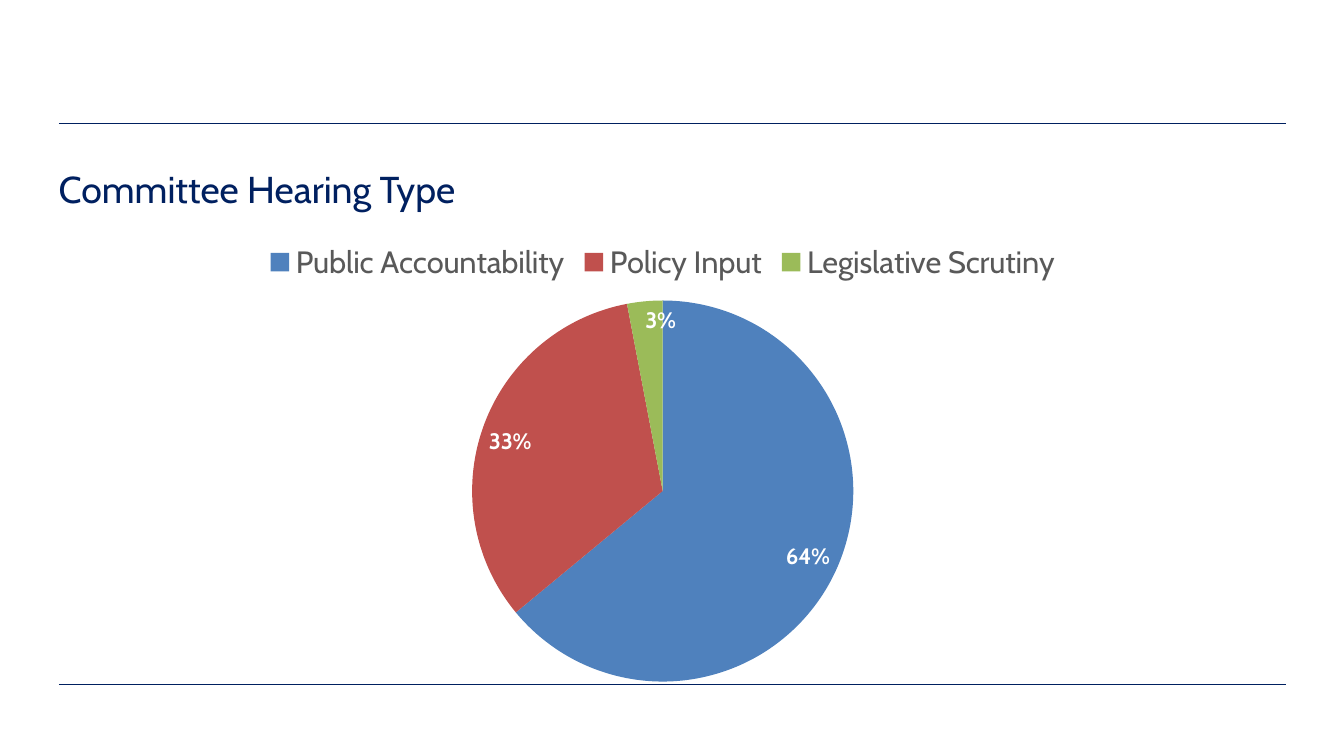
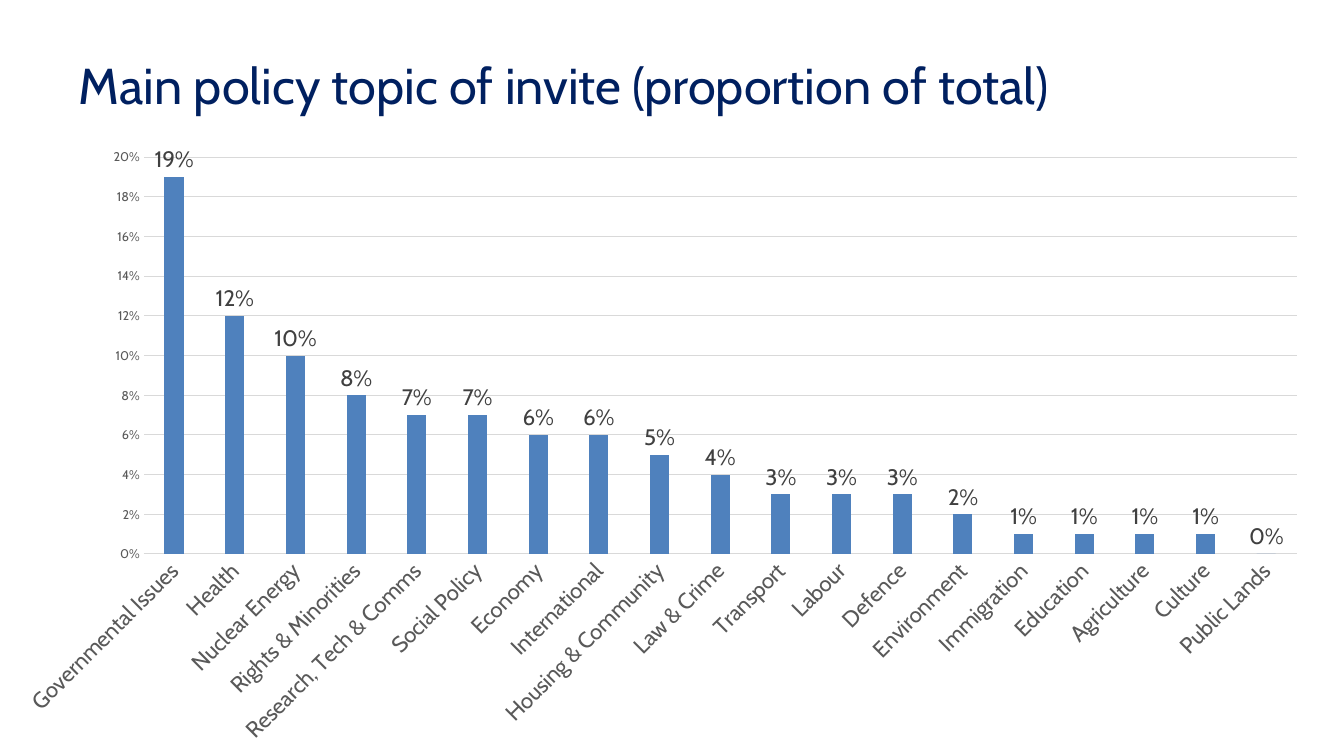
"""Build two chart slides on committee hearings and invite topics."""
from lxml import etree
from pptx import Presentation, util as u
from pptx.chart.data import CategoryChartData
from pptx.dml.color import RGBColor
from pptx.enum import chart as c, shapes, text
from pptx.oxml.ns import qn

FONT = "Cabin"
COLORS = {
    "navy": "002060",
    "blue": "4F81BD",
    "red": "C0504D",
    "green": "9BBB59",
    "label": "404040",
    "axis": "595959",
    "grid": "D9D9D9",
    "white": "FFFFFF",
    "black": "000000",
}

presentation = Presentation()
presentation.slide_width = u.Inches(13.33)
presentation.slide_height = u.Inches(7.5)
COLUMN = presentation.slide_width / 160
ROW = presentation.slide_height / 90


def place(left, top, width, height):
    """Turn grid columns and rows into slide lengths."""
    return [round(n * unit) for n, unit in zip((left, top, width, height), (COLUMN, ROW) * 2)]


def format_text(target, words=None, size=10, color="black", bold=False):
    """Set a font, or fill a text frame with words in that font."""
    font = target
    if words is not None:
        target.word_wrap = True
        target.vertical_anchor = text.MSO_ANCHOR.TOP
        target.margin_left = target.margin_right = 0
        target.margin_top = target.margin_bottom = 0
        run = target.paragraphs[0].add_run()
        run.text = words
        font = run.font
    font.name = FONT
    font.size = u.Pt(size)
    font.bold = bold
    font.color.rgb = RGBColor.from_string(COLORS[color])


HEARINGS = {
    "Public Accountability": (64, "blue"),
    "Policy Input": (33, "red"),
    "Legislative Scrutiny": (3, "green"),
}
TOPICS = {
    "Governmental Issues": 0.19,
    "Health": 0.12,
    "Nuclear Energy": 0.10,
    "Rights & Minorities": 0.08,
    "Research, Tech & Comms": 0.07,
    "Social Policy": 0.07,
    "Economy": 0.06,
    "International": 0.06,
    "Housing & Community": 0.05,
    "Law & Crime": 0.04,
    "Transport": 0.03,
    "Labour": 0.03,
    "Defence": 0.03,
    "Environment": 0.02,
    "Immigration": 0.01,
    "Education": 0.01,
    "Agriculture": 0.01,
    "Culture": 0.01,
    "Public Lands": 0,
}
SLIDES = [
    {
        "title": "Committee Hearing Type", "size": 26.7, "title_at": (7, 19.8),
        "rules": (14.75, 81.5), "kind": c.XL_CHART_TYPE.PIE,
        "chart_at": (7, 27.4, 143.8, 55.4),
        "values": {name: value for name, (value, color) in HEARINGS.items()},
        "label_color": "white", "label_position": c.XL_LABEL_POSITION.INSIDE_END,
    },
    {
        "title": "Main policy topic of invite (proportion of total)", "size": 36,
        "title_at": (9.4, 6.4), "rules": (), "kind": c.XL_CHART_TYPE.COLUMN_CLUSTERED,
        "chart_at": (0, 16.3, 157.5, 73.7), "values": TOPICS,
        "label_color": "label", "label_position": c.XL_LABEL_POSITION.OUTSIDE_END,
    },
]

for content in SLIDES:
    slide = presentation.slides.add_slide(presentation.slide_layouts[6])
    is_pie = content["kind"] == c.XL_CHART_TYPE.PIE

    for row in content["rules"]:
        rule = slide.shapes.add_connector(
            shapes.MSO_CONNECTOR.STRAIGHT, *place(7, row, 153.1, row))
        rule.line.color.rgb = RGBColor.from_string(COLORS["navy"])
        rule.line.width = u.Pt(0.75)
        etree.SubElement(rule._element.spPr, qn("a:effectLst"))

    title = slide.shapes.add_textbox(*place(*content["title_at"], 141.4, 7.6))
    format_text(title.text_frame, content["title"], size=content["size"], color="navy")

    data = CategoryChartData(number_format="General" if is_pie else "0%")
    data.categories = list(content["values"])
    data.add_series("Series 1", list(content["values"].values()))
    chart = slide.shapes.add_chart(content["kind"], *place(*content["chart_at"]), data).chart
    chart.has_title = False
    chart.has_legend = is_pie
    format_text(chart.font)

    plot = chart.plots[0]
    plot.vary_by_categories = is_pie
    plot.has_data_labels = True
    labels = plot.data_labels
    labels.show_value = not is_pie
    labels.show_percentage = is_pie
    labels.number_format = "0%"
    labels.number_format_is_linked = False
    labels.position = content["label_position"]
    format_text(labels.font, size=16, color=content["label_color"], bold=is_pie)
    series = plot.series[0]

    if is_pie:
        chart.legend.position = c.XL_LEGEND_POSITION.TOP
        chart.legend.include_in_layout = False
        format_text(chart.legend.font, size=22, color="axis")
        for index, (value, color) in enumerate(HEARINGS.values()):
            fill = series.points[index].format.fill
            fill.solid()
            fill.fore_color.rgb = RGBColor.from_string(COLORS[color])
        continue

    plot.gap_width = 219
    plot.overlap = -27
    series.format.fill.solid()
    series.format.fill.fore_color.rgb = RGBColor.from_string(COLORS["blue"])

    topics, shares = chart.category_axis, chart.value_axis
    for axis, size in ((topics, 16), (shares, 9)):
        axis.major_tick_mark = axis.minor_tick_mark = c.XL_TICK_MARK.NONE
        format_text(axis.tick_labels.font, size=size, color="axis")
    topics._element.find(qn("c:txPr")).find(qn("a:bodyPr")).set("rot", "-2700000")
    shares.minimum_scale, shares.maximum_scale, shares.major_unit = 0, 0.2, 0.02
    shares.tick_labels.number_format = "0%"
    shares.tick_labels.number_format_is_linked = False
    shares.format.line.fill.background()
    shares.has_major_gridlines = True
    for line in (topics.format.line, shares.major_gridlines.format.line):
        line.color.rgb = RGBColor.from_string(COLORS["grid"])
        line.width = u.Pt(0.75)

presentation.save("out.pptx")
